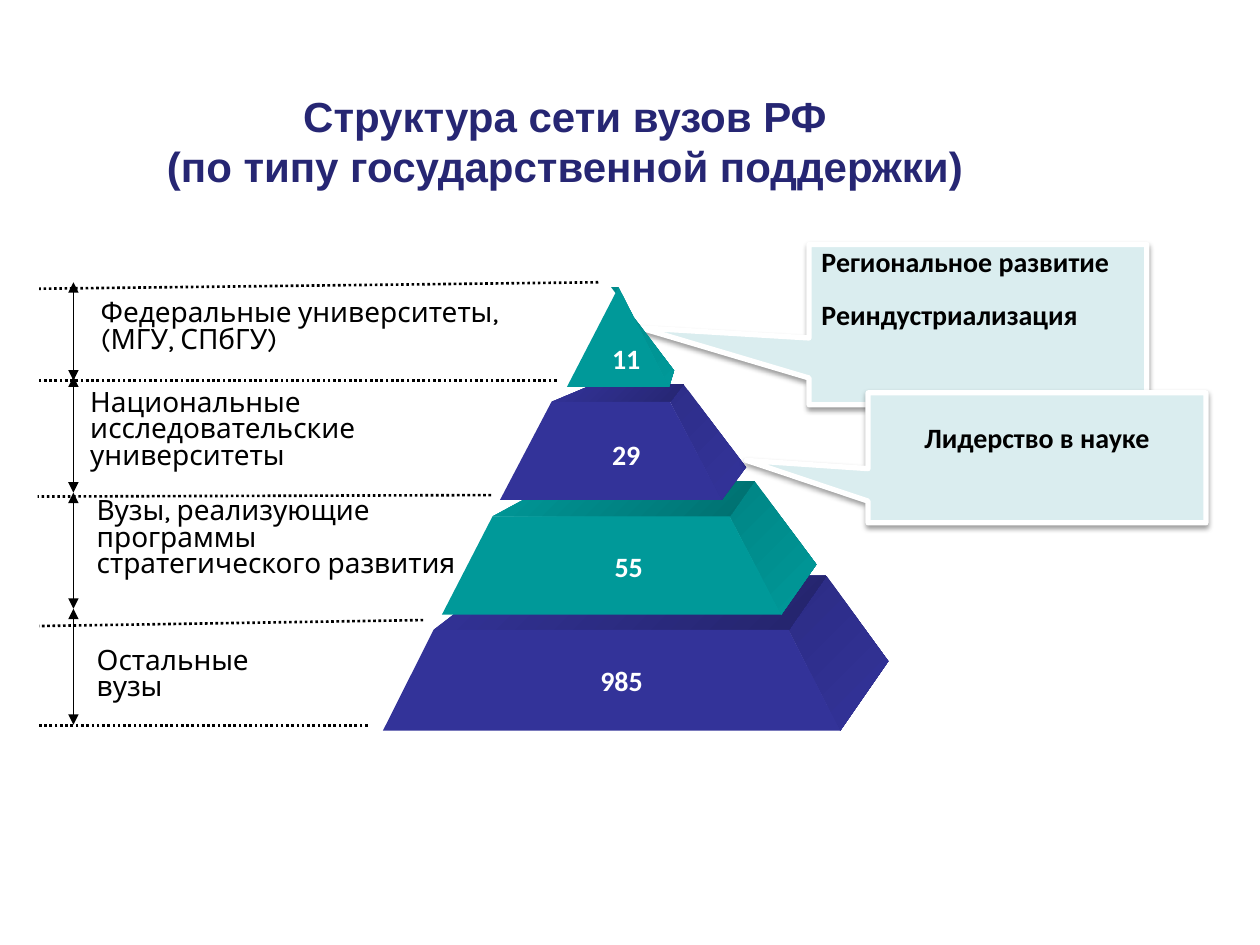
from lxml.etree import SubElement
from pptx import Presentation
from pptx.dml.color import RGBColor
from pptx.enum.dml import MSO_LINE
from pptx.enum.shapes import MSO_CONNECTOR, MSO_SHAPE
from pptx.enum.text import MSO_ANCHOR, PP_ALIGN
from pptx.oxml.ns import qn
from pptx.util import Cm, Pt

COLORS = {
    "title": "262673", "text": "000000", "light": "FFFFFF", "callout": "DAEDEF",
    "indigo": "333399", "teal": "009999",
}
TITLE_FONT = {"name": "Arial", "size": Pt(24), "bold": True}
LABEL_FONT = {"name": "Karla", "size": Pt(16)}
STRONG_FONT = {"name": "Calibri", "size": Pt(16), "bold": True}

DIVIDERS = [
    (6.65, 8.94, 0, 8.94), (7.77, 6.81, 0.03, 6.93), (9.14, 4.29, 0, 4.32),
    (10.46, 1.98, 0, 1.98), (11.3, 0, 0.03, 0.13),
]
SPANS = [(0, 1.98), (1.9, 4.24), (4.24, 6.58), (6.58, 8.92)]
LABELS = [
    ("Федеральные университеты, (МГУ, СПбГУ)", (1.02, 0.25, 8.76, 1.35)),
    ("Национальные исследовательские университеты", (0.81, 2.06, 8.2, 1.91)),
    ("Вузы, реализующие программы стратегического развития", (0.94, 4.24, 7.92, 1.91)),
    ("Остальные вузы", (0.94, 7.26, 4.78, 0.81)),
]
TIERS = [
    {"base": (0, 9.22, 8.94), "top": (1.02, 8.18, 6.91), "back": (2.44, 8.94, 5.82),
     "corner": (10.19, 7.54), "color": "indigo", "side": "2C2C85", "lid": "24246B",
     "number": "985", "number_box": (4.06, 7.47, 1.5, 1.02)},
    {"base": (1.19, 8.03, 6.6), "top": (2.21, 6.99, 4.62), "back": (3.53, 7.49, 3.91),
     "corner": (8.74, 5.59), "color": "teal", "side": "008585", "lid": "006F6F",
     "number": "55", "number_box": (4.37, 5.16, 1.17, 1.02)},
    {"base": (2.36, 6.83, 4.29), "top": (3.4, 5.79, 2.31), "back": (4.24, 6.06, 1.96),
     "corner": (7.32, 3.63), "color": "indigo", "side": "2E2E8A", "lid": "262672",
     "number": "29", "number_box": (4.32, 2.9, 1.17, 1.02)},
    {"base": (3.71, 5.77, 2.01), "top": (4.75, 4.75, 0), "back": (4.6, 4.6, 0),
     "corner": (5.87, 1.68), "color": "teal", "side": "008A8A", "lid": None,
     "number": "11", "number_box": (4.32, 0.97, 1.17, 1.02)},
]


def rgb(color):
    """Return a colour for a palette name or a hex string."""
    return RGBColor.from_string(COLORS.get(color, color))


def write(paragraph, text, font, color, **layout):
    """Fill a paragraph and format it."""
    paragraph.text = text
    for target, values in ((paragraph.font, font), (paragraph, layout)):
        for name, value in values.items():
            setattr(target, name, value)
    paragraph.font.color.rgb = rgb(color)


def add_text(slide, origin, box, text, font, color, wrap=True, **layout):
    """Add a text box placed relative to the origin of its region."""
    left, top, width, height = box
    shape = slide.shapes.add_textbox(
        Cm(origin[0] + left), Cm(origin[1] + top), Cm(width), Cm(height))
    shape.text_frame.word_wrap = wrap
    write(shape.text_frame.paragraphs[0], text, font, color, **layout)


def add_line(slide, origin, ends, width, dash=None, arrows=False):
    """Add a straight line, dashed or with arrowheads at both ends."""
    x, y = origin
    x1, y1, x2, y2 = ends
    connector = slide.shapes.add_connector(
        MSO_CONNECTOR.STRAIGHT, Cm(x + x1), Cm(y + y1), Cm(x + x2), Cm(y + y2))
    line = connector.line
    line.color.rgb = rgb("text")
    line.width = Pt(width)
    if dash:
        line.dash_style = dash
    if arrows:
        outline = line._get_or_add_ln()
        for tag in ("a:headEnd", "a:tailEnd"):
            SubElement(outline, qn(tag), type="triangle")
    SubElement(connector._element.spPr, qn("a:effectLst"))


def add_face(slide, origin, points, colors):
    """Add one pyramid face with a plain or two-colour fill."""
    corners = [(Cm(origin[0] + x), Cm(origin[1] + y)) for x, y in points]
    builder = slide.shapes.build_freeform(*corners[0], scale=1.0)
    builder.add_line_segments(corners[1:], close=True)
    shape = builder.convert_to_shape()
    shape.shadow.inherit = False
    shape.line.fill.background()
    if len(colors) == 1:
        shape.fill.solid()
        shape.fill.fore_color.rgb = rgb(colors[0])
        return
    shape.fill.gradient()
    shape.fill.gradient_angle = 315
    for stop, color in zip(shape.fill.gradient_stops, colors):
        stop.color.rgb = rgb(color)


def add_title(slide, box):
    """Place and format the slide title."""
    title = slide.shapes.title
    for name, value in zip(("left", "top", "width", "height"), box):
        setattr(title, name, Cm(value))
    title.text_frame.vertical_anchor = MSO_ANCHOR.MIDDLE
    write(title.text_frame.paragraphs[0],
          "Структура сети вузов РФ\v(по типу государственной поддержки)",
          TITLE_FONT, "title", alignment=PP_ALIGN.CENTER)


def add_scale(slide, origin):
    """Draw the dotted levels, their spans and the group names."""
    for ends in DIVIDERS:
        add_line(slide, origin, ends, 1.5, dash=MSO_LINE.ROUND_DOT)
    for start, end in SPANS:
        add_line(slide, origin, (0.72, start, 0.72, end), 0.75, arrows=True)
    for text, box in LABELS:
        add_text(slide, origin, box, text, LABEL_FONT, "text", line_spacing=0.8)


def add_pyramid(slide, origin):
    """Stack the tiers from the base up, then number them."""
    for tier in TIERS:
        base_left, base_right, base_y = tier["base"]
        top_left, top_right, top_y = tier["top"]
        back_left, back_right, back_y = tier["back"]
        color = tier["color"]
        front_edge = [(base_right, base_y), (top_right, top_y)]
        add_face(slide, origin, front_edge + [(back_right, back_y), tier["corner"]],
                 (tier["side"], color))
        if tier["lid"]:
            add_face(slide, origin, [(top_left, top_y), (top_right, top_y),
                                     (back_right, back_y), (back_left, back_y)],
                     (color, tier["lid"]))
        add_face(slide, origin, front_edge + [(top_left, top_y), (base_left, base_y)],
                 (color,))
    for tier in TIERS:
        add_text(slide, origin, tier["number_box"], tier["number"], STRONG_FONT,
                 "light", wrap=False, alignment=PP_ALIGN.CENTER)


def add_callout(slide, box, pointer, lines, margin_top, **layout):
    """Add a shadowed callout whose pointer reaches to the pyramid."""
    shape = slide.shapes.add_shape(
        MSO_SHAPE.RECTANGULAR_CALLOUT, *(Cm(value) for value in box))
    for index, value in enumerate(pointer):
        shape.adjustments[index] = value
    shape.fill.solid()
    shape.fill.fore_color.rgb = rgb("callout")
    shape.line.color.rgb = rgb("light")
    shape.line.width = Pt(3)
    shape.shadow.inherit = False
    effects = shape._element.spPr.find(qn("a:effectLst"))
    shadow = SubElement(effects, qn("a:outerShdw"), blurRad=str(Pt(3.1)),
                        dist=str(Pt(1.6)), dir="5400000", rotWithShape="0")
    tint = SubElement(shadow, qn("a:srgbClr"), val=COLORS["text"])
    SubElement(tint, qn("a:alpha"), val="38000")
    frame = shape.text_frame
    frame.word_wrap = True
    frame.vertical_anchor = MSO_ANCHOR.TOP
    frame.margin_top = Cm(margin_top)
    for index, text in enumerate(lines):
        paragraph = frame.add_paragraph() if index else frame.paragraphs[0]
        write(paragraph, text, STRONG_FONT, "text",
              space_before=Pt(15 if index else 0), **layout)


def main():
    """Build the slide and save it."""
    presentation = Presentation()
    presentation.slide_width, presentation.slide_height = Cm(25.4), Cm(19.05)
    slide = presentation.slides.add_slide(presentation.slide_layouts[5])
    add_title(slide, (1.27, 1.73, 20.24, 2.21))
    add_callout(slide, (16.31, 4.93, 6.81, 3.23), (-1, 0.02),
                ("Региональное развитие", "Реиндустриализация"), 0.13,
                alignment=PP_ALIGN.LEFT, line_spacing=0.8)
    add_scale(slide, (0.76, 5.69))
    add_pyramid(slide, (7.72, 5.79))
    add_callout(slide, (17.5, 7.92, 6.81, 2.62), (-0.86, 0.02),
                ("Лидерство в науке",), 0.56, alignment=PP_ALIGN.CENTER)
    presentation.save("out.pptx")


if __name__ == "__main__":
    main()
